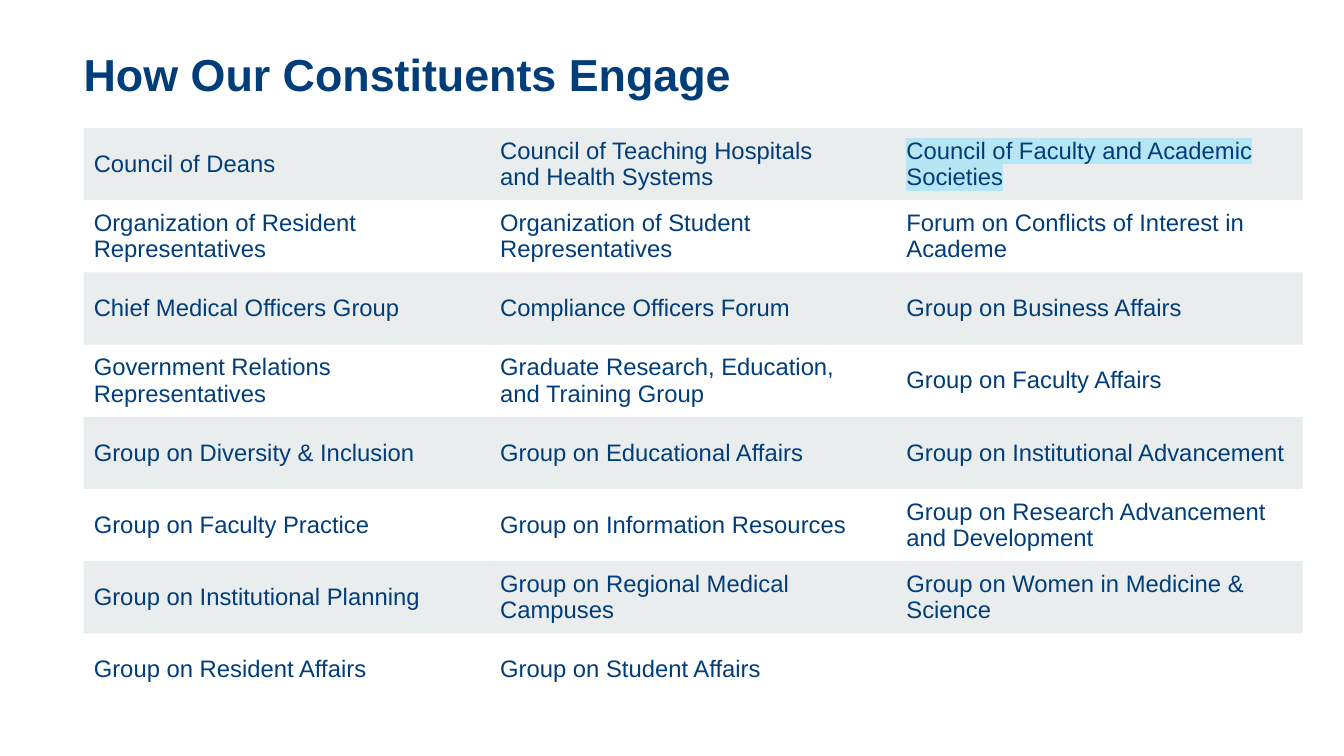
from dataclasses import dataclass

from lxml import etree
from pptx import Presentation
from pptx.dml.color import RGBColor
from pptx.enum.text import MSO_ANCHOR
from pptx.oxml.ns import qn
from pptx.slide import Slide
from pptx.table import _Cell
from pptx.text.text import TextFrame
from pptx.util import Inches, Pt

MIDDLE = MSO_ANCHOR.MIDDLE
BOTTOM = MSO_ANCHOR.BOTTOM

NAVY = RGBColor(0x01, 0x3D, 0x79)
BAND_GRAY = RGBColor(0x91, 0xA5, 0xA6)
HIGHLIGHT_BLUE = RGBColor(0xB6, 0xE5, 0xF4)
BAND_OPACITY = 20
PLAIN_TABLE_STYLE = "{2D5ABB26-0587-4C30-8999-92F81FD0307C}"

FONT = "Arial"
SLIDE_WIDTH = Inches(13.33)
SLIDE_HEIGHT = Inches(7.5)
LEFT = Inches(0.83)
TITLE_TOP = Inches(0.32)
TITLE_WIDTH = Inches(12.23)
TITLE_HEIGHT = Inches(0.68)
TABLE_TOP = Inches(1.27)
COLUMN_WIDTH = Inches(4.03)
ROW_HEIGHT = Inches(5.73 / 8)


@dataclass(frozen=True)
class Constituent:
    name: str
    highlighted: bool = False


@dataclass(frozen=True)
class ConstituentRow:
    constituents: tuple[Constituent, ...]
    banded: bool


NAMES = [
    ("Council of Deans", "Council of Teaching Hospitals\nand Health Systems",
     "Council of Faculty and Academic Societies"),
    ("Organization of Resident Representatives", "Organization of Student Representatives",
     "Forum on Conflicts of Interest in Academe"),
    ("Chief Medical Officers Group", "Compliance Officers Forum", "Group on Business Affairs"),
    ("Government Relations Representatives",
     "Graduate Research, Education,\nand Training Group", "Group on Faculty Affairs"),
    ("Group on Diversity & Inclusion", "Group on Educational Affairs",
     "Group on Institutional Advancement"),
    ("Group on Faculty Practice", "Group on Information Resources",
     "Group on Research Advancement and Development"),
    ("Group on Institutional Planning", "Group on Regional Medical Campuses",
     "Group on Women in Medicine & Science"),
    ("Group on Resident Affairs", "Group on Student Affairs", ""),
]
HIGHLIGHTED_NAME = "Council of Faculty and Academic Societies"
ROWS = [
    ConstituentRow(
        tuple(Constituent(name, name == HIGHLIGHTED_NAME) for name in names),
        banded=index % 2 == 0,
    )
    for index, names in enumerate(NAMES)
]


def write_text(text_frame: TextFrame, text: str, size: float, bold: bool) -> None:
    text_frame.text = text
    for paragraph in text_frame.paragraphs:
        for font in [paragraph.font, *(run.font for run in paragraph.runs)]:
            font.name = FONT
            font.size = Pt(size)
            font.bold = bold
            font.color.rgb = NAVY


def highlight_text(text_frame: TextFrame, color: RGBColor) -> None:
    for paragraph in text_frame.paragraphs:
        for run in paragraph.runs:
            highlight = etree.Element(qn("a:highlight"))
            etree.SubElement(highlight, qn("a:srgbClr"), val=str(color))
            run.font._element.find(qn("a:solidFill")).addnext(highlight)


def fill_cell(cell: _Cell, banded: bool) -> None:
    if not banded:
        cell.fill.background()
        return
    cell.fill.solid()
    cell.fill.fore_color.rgb = BAND_GRAY
    color = cell._tc.tcPr.find(qn("a:solidFill")).find(qn("a:srgbClr"))
    etree.SubElement(color, qn("a:alpha"), val=str(BAND_OPACITY * 1000))


def add_title(slide: Slide, text: str) -> None:
    title = slide.shapes.add_textbox(LEFT, TITLE_TOP, TITLE_WIDTH, TITLE_HEIGHT)
    text_frame = title.text_frame
    text_frame.word_wrap = True
    text_frame.vertical_anchor = BOTTOM
    text_frame.margin_left = text_frame.margin_right = 0
    text_frame.margin_top = text_frame.margin_bottom = 0
    write_text(text_frame, text, 32, bold=True)
    text_frame.paragraphs[0].line_spacing = 0.85


def add_constituent_table(slide: Slide, rows: list[ConstituentRow]) -> None:
    column_count = len(rows[0].constituents)
    table = slide.shapes.add_table(
        len(rows), column_count, LEFT, TABLE_TOP,
        COLUMN_WIDTH * column_count, ROW_HEIGHT * len(rows),
    ).table
    table.first_row = False
    table.horz_banding = False
    table._tbl.tblPr.find(qn("a:tableStyleId")).text = PLAIN_TABLE_STYLE
    for row_index, row in enumerate(rows):
        for column_index, constituent in enumerate(row.constituents):
            cell = table.cell(row_index, column_index)
            cell.vertical_anchor = MIDDLE
            fill_cell(cell, row.banded)
            write_text(cell.text_frame, constituent.name, 17, bold=False)
            if constituent.highlighted:
                highlight_text(cell.text_frame, HIGHLIGHT_BLUE)


def main() -> None:
    presentation = Presentation()
    presentation.slide_width = SLIDE_WIDTH
    presentation.slide_height = SLIDE_HEIGHT
    slide = presentation.slides.add_slide(presentation.slide_layouts[6])
    add_title(slide, "How Our Constituents Engage")
    add_constituent_table(slide, ROWS)
    presentation.save("out.pptx")


if __name__ == "__main__":
    main()
